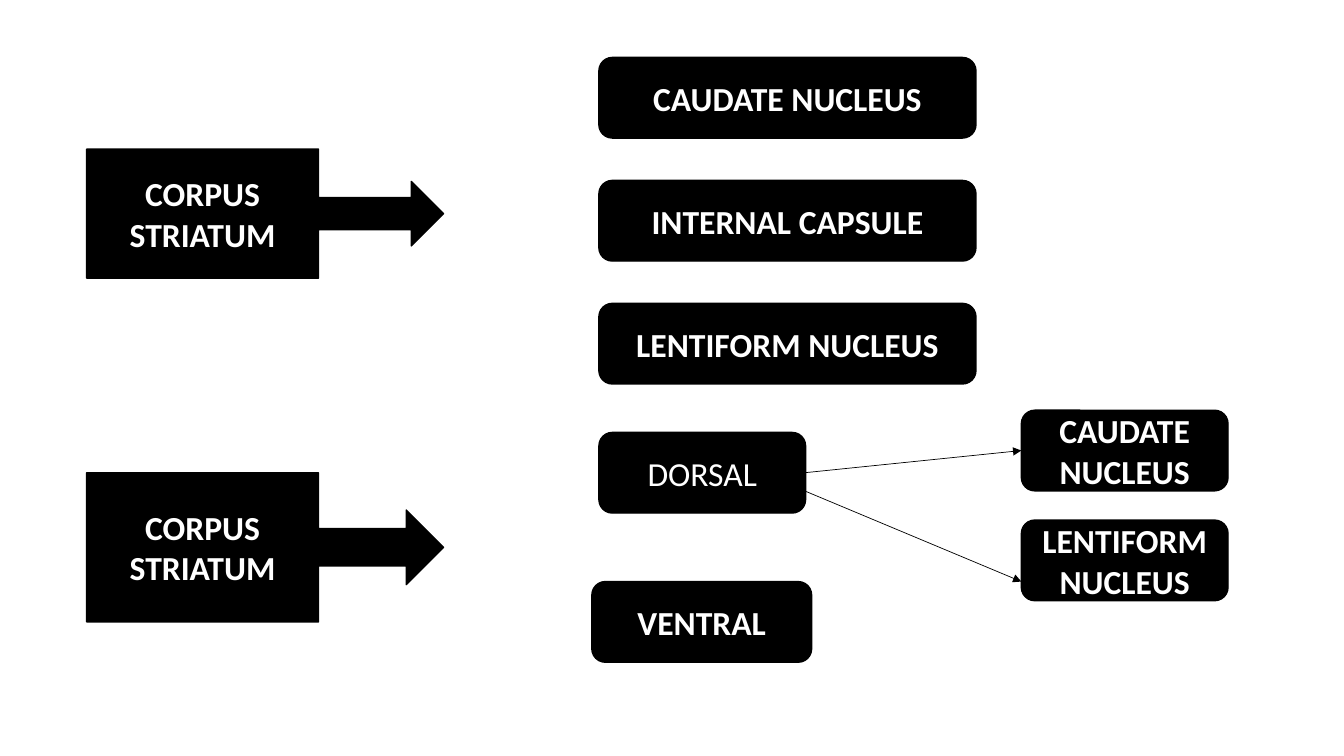
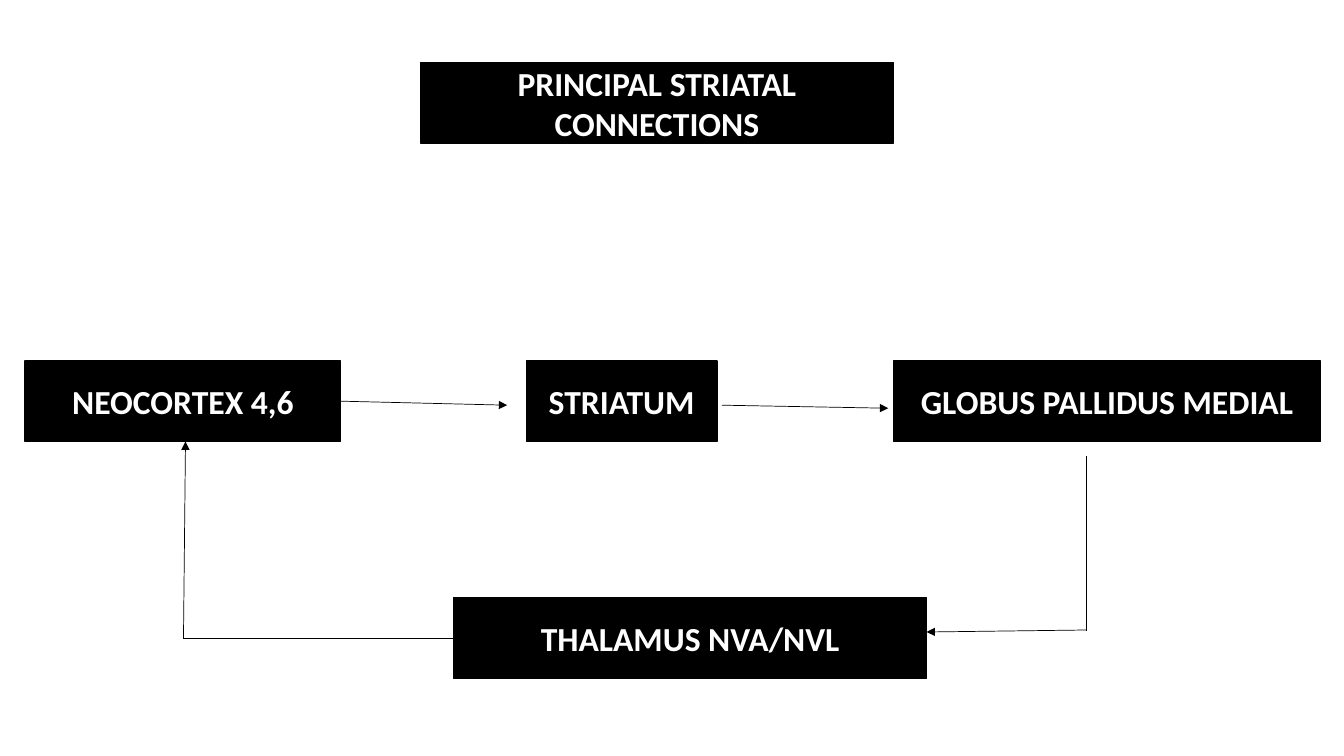
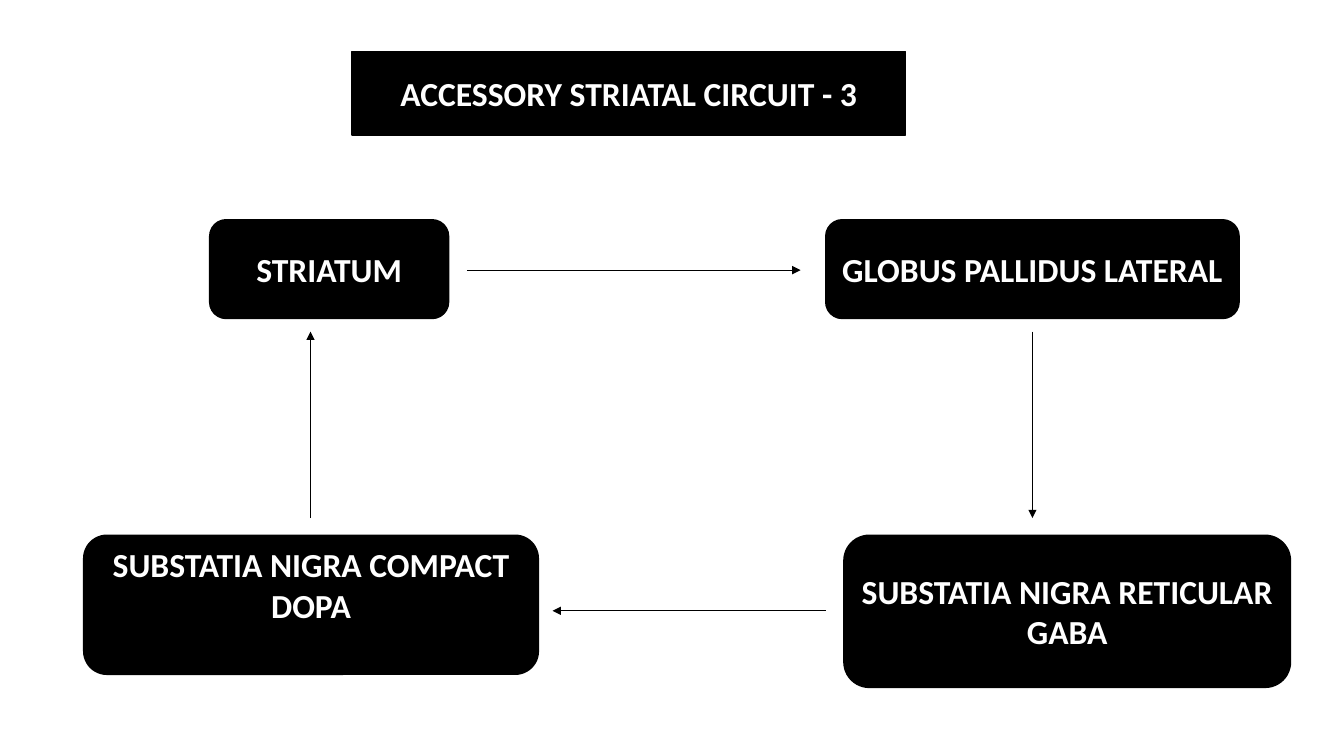
from lxml import etree
from pptx import Presentation
from pptx.dml.color import RGBColor
from pptx.enum.shapes import MSO_CONNECTOR, MSO_SHAPE
from pptx.enum.text import MSO_ANCHOR, PP_ALIGN
from pptx.oxml.ns import qn
from pptx.util import Pt

PX = 9144
BLACK = RGBColor(0, 0, 0)
WHITE = RGBColor(255, 255, 255)
FONT = "Calibri"
RECT = MSO_SHAPE.RECTANGLE
ROUND = MSO_SHAPE.ROUNDED_RECTANGLE
CALLOUT = MSO_SHAPE.RIGHT_ARROW_CALLOUT
STRAIGHT = MSO_CONNECTOR.STRAIGHT
CENTER = PP_ALIGN.CENTER
MIDDLE = MSO_ANCHOR.MIDDLE


def add_box(slide, text, at, shape=RECT, bold=True, bottom_inset=5):
    box = slide.shapes.add_shape(shape, *[value * PX for value in at])
    box.shadow.inherit = False
    box.fill.solid()
    box.fill.fore_color.rgb = BLACK
    box.line.color.rgb = BLACK
    box.line.width = Pt(1)
    frame = box.text_frame
    frame.word_wrap = True
    frame.vertical_anchor = MIDDLE
    frame.margin_bottom = bottom_inset * PX
    frame.text = text
    for paragraph in frame.paragraphs:
        paragraph.alignment = CENTER
        for run in paragraph.runs:
            run.font.name = FONT
            run.font.size = Pt(24)
            run.font.bold = bold
            run.font.color.rgb = WHITE


def add_link(slide, ends, arrow=True):
    link = slide.shapes.add_connector(STRAIGHT, *[value * PX for value in ends])
    link.line.color.rgb = BLACK
    link.line.width = Pt(0.5)
    properties = link._element.spPr
    if arrow:
        etree.SubElement(properties.find(qn("a:ln")), qn("a:tailEnd"), type="triangle")
    etree.SubElement(properties, qn("a:effectLst"))


prs = Presentation()
prs.slide_width = 1333 * PX
prs.slide_height = 750 * PX
blank = prs.slide_layouts[6]

divisions = prs.slides.add_slide(blank)
for top, height in [(148, 128), (469, 148)]:
    add_box(divisions, "CORPUS\nSTRIATUM", (86, top, 354, height), shape=CALLOUT)
for row, part in enumerate(["CAUDATE NUCLEUS", "INTERNAL CAPSULE", "LENTIFORM NUCLEUS"]):
    add_box(divisions, part, (594, 57 + row * 122, 374, 80), shape=ROUND)
add_box(divisions, "DORSAL", (594, 429, 205, 80), shape=ROUND, bold=False)
add_box(divisions, "VENTRAL", (587, 577, 218, 80), shape=ROUND)
for nucleus, top in [("CAUDATE\nNUCLEUS", 407), ("LENTIFORM\nNUCLEUS", 516)]:
    add_box(divisions, nucleus, (1013, top, 205, 80), shape=ROUND)
for start, end in [(469, 447), (487, 577)]:
    add_link(divisions, (798, start, 1013, end))

connections = prs.slides.add_slide(blank)
for region, left, top, width in [
    ("PRINCIPAL STRIATAL CONNECTIONS", 417, 62, 469),
    ("NEOCORTEX 4,6", 25, 358, 313),
    ("STRIATUM", 522, 358, 189),
    ("GLOBUS PALLIDUS MEDIAL", 886, 358, 424),
    ("THALAMUS NVA/NVL", 450, 593, 469),
]:
    add_box(connections, region, (left, top, width, 80))
for ends in [
    (338, 398, 503, 402),
    (716, 402, 881, 405),
    (182, 633, 184, 438),
    (1077, 625, 919, 627),
]:
    add_link(connections, ends)
for ends in [(182, 633, 450, 633), (1077, 626, 1077, 452)]:
    add_link(connections, ends, arrow=False)

circuit = prs.slides.add_slide(blank)
add_box(circuit, "ACCESSORY STRIATAL CIRCUIT - 3", (349, 51, 549, 83))
for region, at in [
    ("STRIATUM", (208, 218, 237, 98)),
    ("GLOBUS PALLIDUS LATERAL", (819, 218, 410, 98)),
    ("SUBSTATIA NIGRA RETICULAR GABA", (837, 531, 443, 151)),
]:
    add_box(circuit, region, at, shape=ROUND)
add_box(circuit, "SUBSTATIA NIGRA COMPACT\nDOPA", (83, 531, 451, 138),
        shape=ROUND, bottom_inset=45)
for ends in [
    (463, 268, 794, 268),
    (1024, 329, 1024, 514),
    (819, 606, 548, 606),
    (308, 514, 308, 329),
]:
    add_link(circuit, ends)

prs.save("out.pptx")
